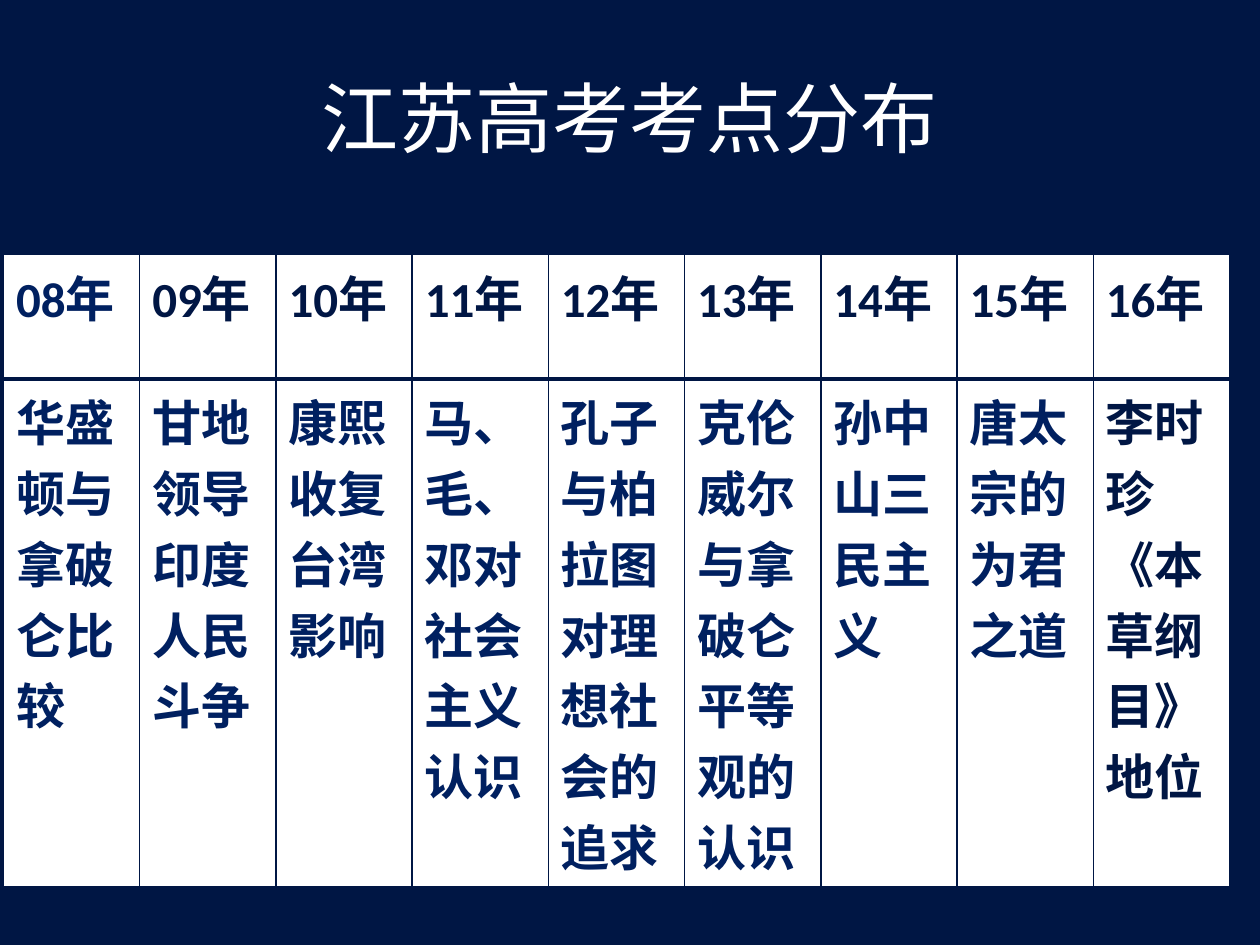
from lxml.etree import SubElement
from pptx import Presentation
from pptx.dml.color import RGBColor
from pptx.enum.text import MSO_ANCHOR, PP_ALIGN
from pptx.oxml.ns import qn
from pptx.util import Pt

NAVY, BLUE, WHITE = "001644", "002060", "FFFFFF"
FONT = "Calibri"
TITLE = "江苏高考考点分布"
# year, year colour, topic, topic colour
TOPICS = [
    ("08年", BLUE, "华盛顿与拿破仑比较", BLUE),
    ("09年", NAVY, "甘地领导印度人民斗争", BLUE),
    ("10年", NAVY, "康熙收复台湾影响", BLUE),
    ("11年", NAVY, "马、毛、邓对社会主义认识", BLUE),
    ("12年", NAVY, "孔子与柏拉图对理想社会的追求", BLUE),
    ("13年", NAVY, "克伦威尔与拿破仑平等观的认识", BLUE),
    ("14年", NAVY, "孙中山三民主义", BLUE),
    ("15年", NAVY, "唐太宗的为君之道", BLUE),
    ("16年", NAVY, "李时珍《本草纲目》地位", NAVY),
]
LEFT, TOP, COLUMN_WIDTH = 2, 145.5, 77.85
ROW_HEIGHTS = (71, 245)


def color(value):
    return RGBColor.from_string(value)


def add_text(paragraph, text, size, text_color, bold=False):
    run = paragraph.add_run()
    run.text = text
    font = run.font
    font.name, font.size, font.bold = FONT, Pt(size), bold
    font.color.rgb = color(text_color)


def set_borders(cell, widths):
    """Draw navy borders; widths are points for left, right, top, bottom."""
    properties = cell._tc.get_or_add_tcPr()
    for index, (side, width) in enumerate(zip("LRTB", widths)):
        line = properties.makeelement(qn(f"a:ln{side}"), {"w": str(Pt(width))})
        fill = SubElement(line, qn("a:solidFill"))
        SubElement(fill, qn("a:srgbClr"), val=NAVY)
        properties.insert(index, line)


def add_title(slide):
    title = slide.shapes.title
    title.left, title.top, title.width, title.height = Pt(36), Pt(21.6), Pt(648), Pt(90)
    frame = title.text_frame
    frame.vertical_anchor = MSO_ANCHOR.MIDDLE
    paragraph = frame.paragraphs[0]
    paragraph.alignment = PP_ALIGN.CENTER
    add_text(paragraph, TITLE, 44, WHITE)


def add_topic_table(slide):
    table = slide.shapes.add_table(
        len(ROW_HEIGHTS), len(TOPICS), Pt(LEFT), Pt(TOP),
        Pt(COLUMN_WIDTH * len(TOPICS)), Pt(sum(ROW_HEIGHTS))).table
    for row, height in zip(table.rows, ROW_HEIGHTS):
        row.height = Pt(height)
    for index, (year, year_color, topic, topic_color) in enumerate(TOPICS):
        table.columns[index].width = Pt(COLUMN_WIDTH)
        entries = [(year, year_color, (1, 1, 1, 3)), (topic, topic_color, (1, 1, 3, 1))]
        for row_index, (text, text_color, widths) in enumerate(entries):
            cell = table.cell(row_index, index)
            cell.fill.solid()
            cell.fill.fore_color.rgb = color(WHITE)
            set_borders(cell, widths)
            add_text(cell.text_frame.paragraphs[0], text, 28, text_color, bold=True)


def main():
    presentation = Presentation()
    presentation.slide_width, presentation.slide_height = Pt(720), Pt(540)
    slide = presentation.slides.add_slide(presentation.slide_layouts[5])
    slide.background.fill.solid()
    slide.background.fill.fore_color.rgb = color(NAVY)
    add_topic_table(slide)
    add_title(slide)
    presentation.save("out.pptx")


if __name__ == "__main__":
    main()
